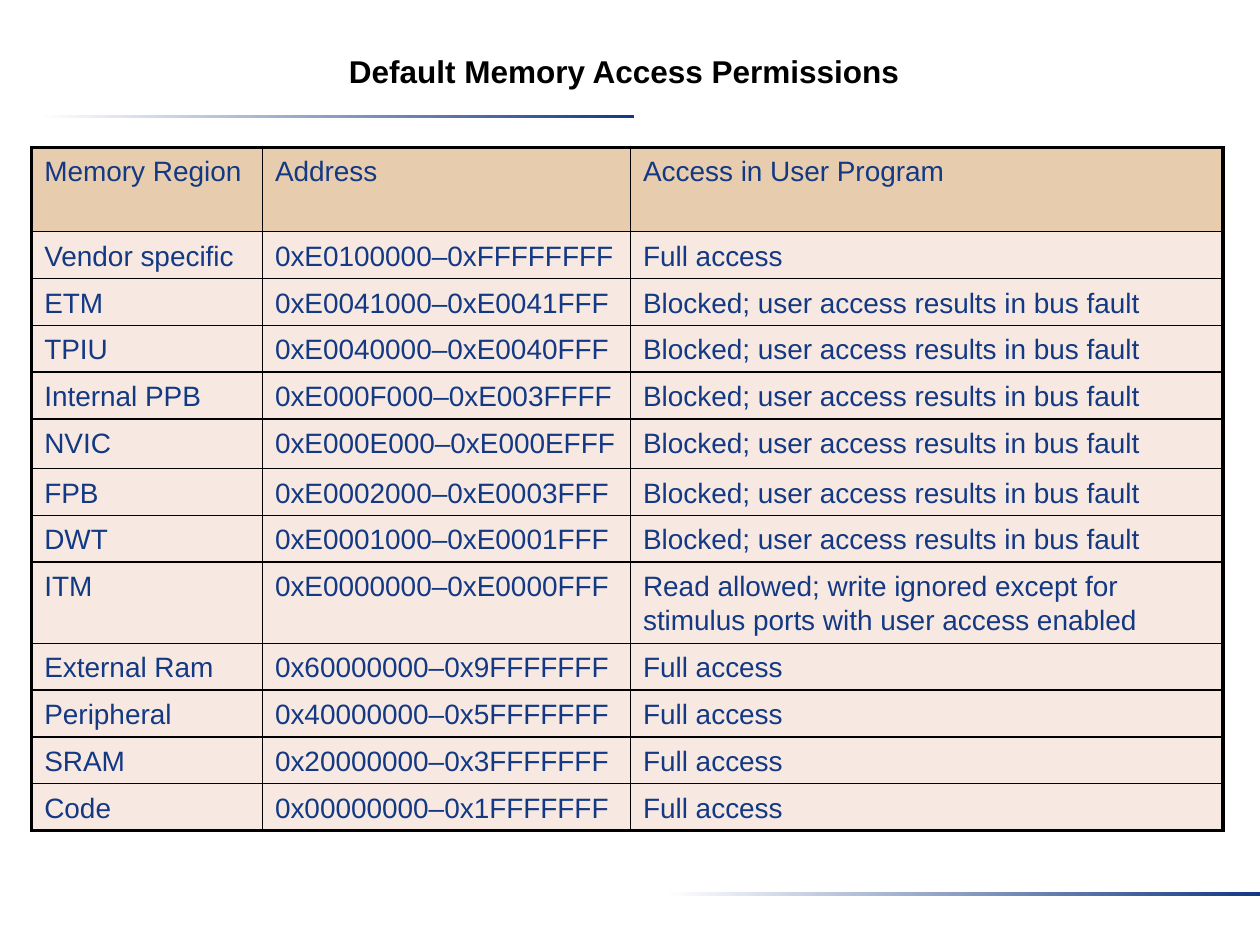
from lxml import etree
from pptx import Presentation
from pptx import util as u
from pptx.dml.color import RGBColor
from pptx.enum import shapes, text
from pptx.oxml.ns import qn

NAVY = RGBColor(0x13, 0x39, 0x84)
WHITE = RGBColor(0xFF, 0xFF, 0xFF)
BLACK = RGBColor(0, 0, 0)
TAN = RGBColor(0xD0, 0x9A, 0x5E)
PEACH = RGBColor(0xF1, 0xD5, 0xC5)

FONT = "Arial"
INNER, OUTER = 1, 2.25
BLOCKED = "Blocked; user access results in bus fault"
FULL = "Full access"
COLUMN_WIDTHS = (4.65, 7.42, 11.94)
ROW_HEIGHT = 0.94
SPECIAL_HEIGHTS = {"Memory Region": 1.7, "NVIC": 1.0, "ITM": 1.63}
REGIONS = [
    ("Memory Region", "Address", "Access in User Program"),
    ("Vendor specific", "0xE0100000–0xFFFFFFFF", FULL),
    ("ETM", "0xE0041000–0xE0041FFF", BLOCKED),
    ("TPIU", "0xE0040000–0xE0040FFF", BLOCKED),
    ("Internal PPB", "0xE000F000–0xE003FFFF", BLOCKED),
    ("NVIC", "0xE000E000–0xE000EFFF", BLOCKED),
    ("FPB", "0xE0002000–0xE0003FFF", BLOCKED),
    ("DWT", "0xE0001000–0xE0001FFF", BLOCKED),
    ("ITM", "0xE0000000–0xE0000FFF",
     "Read allowed; write ignored except for stimulus ports with user access enabled"),
    ("External Ram", "0x60000000–0x9FFFFFFF", FULL),
    ("Peripheral", "0x40000000–0x5FFFFFFF", FULL),
    ("SRAM", "0x20000000–0x3FFFFFFF", FULL),
    ("Code", "0x00000000–0x1FFFFFFF", FULL),
]


def add_run(paragraph, wording, size, color, bold=False):
    """Add one formatted run to a paragraph."""
    run = paragraph.add_run()
    run.text = wording
    run.font.name = FONT
    run.font.size = u.Pt(size)
    run.font.bold = bold
    run.font.color.rgb = color


def add_rule(slide, left, top, width, height):
    """Draw a thin bar fading from white to navy."""
    bar = slide.shapes.add_shape(
        shapes.MSO_SHAPE.RECTANGLE, u.Cm(left), u.Cm(top), u.Cm(width), u.Cm(height))
    bar.shadow.inherit = False
    bar.line.fill.background()
    bar.fill.gradient()
    bar.fill.gradient_angle = 0
    for stop, color in zip(bar.fill.gradient_stops, (WHITE, NAVY)):
        stop.color.rgb = color


def fill_title(slide, left, top, width, height):
    """Place the heading in the title placeholder."""
    title = slide.shapes.title
    title.left, title.top = u.Cm(left), u.Cm(top)
    title.width, title.height = u.Cm(width), u.Cm(height)
    frame = title.text_frame
    frame.auto_size = text.MSO_AUTO_SIZE.NONE
    frame.vertical_anchor = text.MSO_ANCHOR.TOP
    frame.word_wrap = True
    paragraph = frame.paragraphs[0]
    paragraph.alignment = text.PP_ALIGN.LEFT
    paragraph.line_spacing = 0.8
    add_run(paragraph, "Default Memory Access Permissions", 18, BLACK, bold=True)


def add_color(parent, color, alpha=None):
    """Add a solid fill, optionally translucent, to an XML element."""
    solid = etree.SubElement(parent, qn("a:solidFill"))
    value = etree.SubElement(solid, qn("a:srgbClr"), val=str(color))
    if alpha is not None:
        etree.SubElement(value, qn("a:alpha"), val=str(alpha * 1000))


def format_cell(cell, color, borders):
    """Give a cell its four borders and a half-transparent fill."""
    properties = cell._tc.get_or_add_tcPr()
    for side, points in zip("LRTB", borders):
        line = etree.SubElement(properties, qn(f"a:ln{side}"), w=str(u.Pt(points)))
        add_color(line, BLACK)
    add_color(properties, color, alpha=50)


def add_memory_table(slide, left, top):
    """Build the table of memory regions from its top left corner."""
    heights = [SPECIAL_HEIGHTS.get(region[0], ROW_HEIGHT) for region in REGIONS]
    table = slide.shapes.add_table(
        len(REGIONS), len(COLUMN_WIDTHS), u.Cm(left), u.Cm(top),
        u.Cm(sum(COLUMN_WIDTHS)), u.Cm(sum(heights))).table
    table.first_row = table.horz_banding = False
    for column, width in zip(table.columns, COLUMN_WIDTHS):
        column.width = u.Cm(width)
    last_row, last_column = len(REGIONS) - 1, len(COLUMN_WIDTHS) - 1
    for i, region in enumerate(REGIONS):
        table.rows[i].height = u.Cm(heights[i])
        for j, wording in enumerate(region):
            cell = table.cell(i, j)
            edges = (j == 0, j == last_column, i == 0, i == last_row)
            borders = [OUTER if edge else INNER for edge in edges]
            format_cell(cell, PEACH if i else TAN, borders)
            paragraph = cell.text_frame.paragraphs[0]
            paragraph.line_spacing = 1.1
            add_run(paragraph, wording, 16, NAVY)


def main():
    """Create the slide and save it."""
    presentation = Presentation()
    presentation.slide_width, presentation.slide_height = u.Cm(25.4), u.Cm(19.05)
    slide = presentation.slides.add_slide(presentation.slide_layouts[5])
    add_rule(slide, 0.79, 2.31, 11.99, 0.08)
    add_rule(slide, 13.41, 17.98, 11.99, 0.08)
    fill_title(slide, 6.78, 1.07, 11.81, 0.84)
    add_memory_table(slide, 0.64, 2.97)
    presentation.save("out.pptx")


if __name__ == "__main__":
    main()
